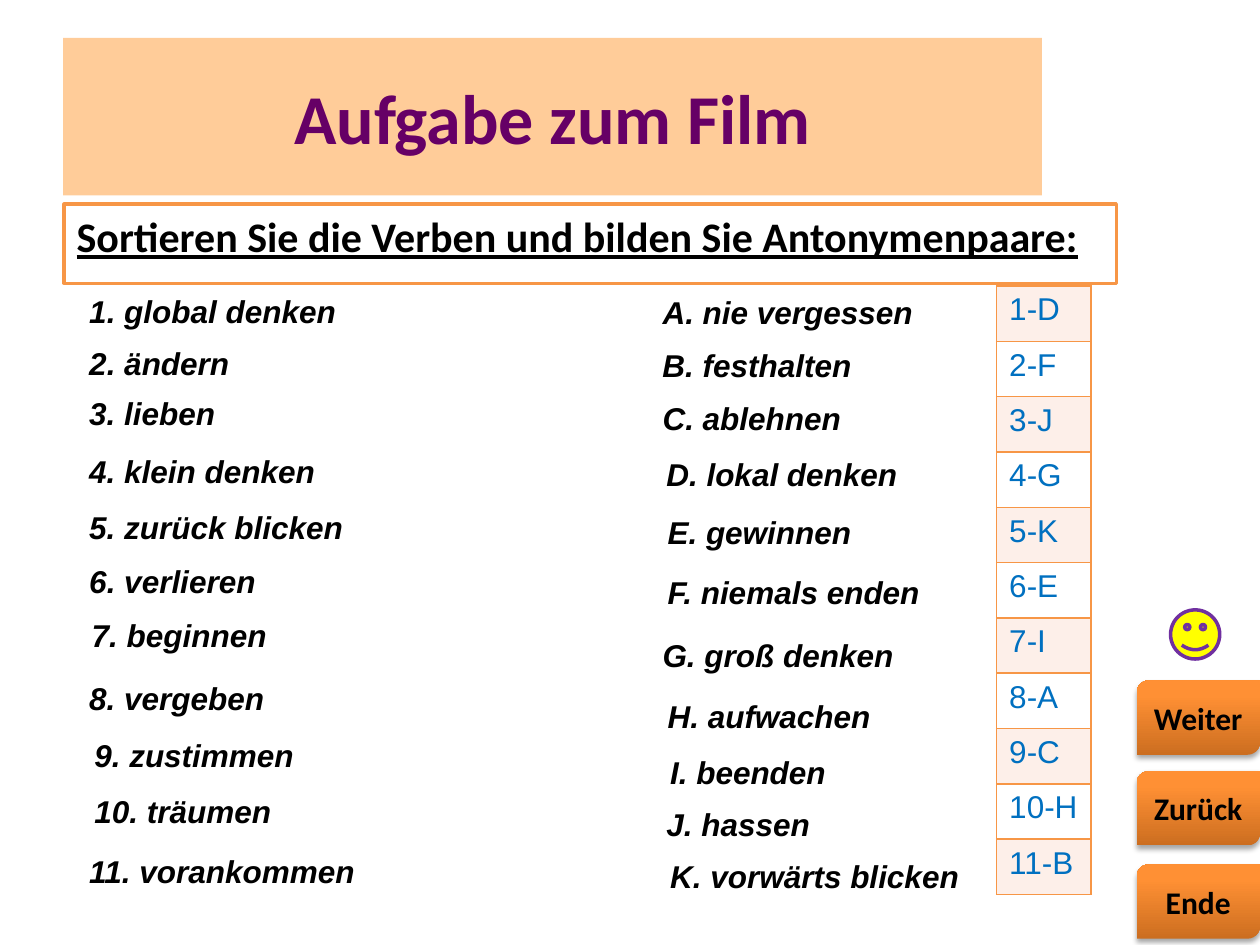
from lxml.etree import SubElement
from pptx import Presentation
from pptx.dml.color import RGBColor
from pptx.enum.shapes import MSO_SHAPE
from pptx.enum.text import MSO_ANCHOR, MSO_AUTO_SIZE, PP_ALIGN
from pptx.oxml import parse_xml
from pptx.oxml.ns import nsdecls, qn
from pptx.util import Inches, Pt

COLORS = {
    "black": "000000", "purple": "660066", "violet": "7030A0", "peach": "FFCC99",
    "orange": "F79646", "band": "FDEFE9", "white": "FFFFFF", "blue": "0070C0",
    "yellow": "FFFF00", "button_low": "CC6E20", "button_mid": "FF9034",
    "button_high": "FF9136",
}
TITLE = {"name": "Calibri", "size": Pt(40), "bold": True, "color": "purple"}
TASK = {"name": "Calibri", "size": Pt(24), "bold": True, "underline": True, "color": "black"}
VERB = {"name": "Arial", "size": Pt(18), "bold": True, "italic": True, "color": "black"}
ANSWER = {"name": "Arial", "size": Pt(18), "color": "blue"}
BUTTON = {"name": "Calibri", "size": Pt(18), "bold": True, "color": "black"}

# Verbs: text, offset from the column edge, top, width
VERBS = [
    ("1. global denken", 0, 2.27, 2.51),
    ("2. ändern", 0, 2.68, 1.32),
    ("3. lieben", 0, 3.08, 1.96),
    ("4. klein denken", 0, 3.54, 2.04),
    ("5. zurück blicken", 0, 3.98, 2.24),
    ("6. verlieren", 0, 4.41, 1.75),
    ("7. beginnen", 0.02, 4.84, 1.6),
    ("8. vergeben", 0, 5.34, 1.6),
    ("9. zustimmen", 0.04, 5.79, 2.01),
    ("10. träumen", 0.04, 6.24, 1.79),
    ("11. vorankommen", 0, 6.71, 2.33),
]
# Antonyms: the same, with line spacing where it is tighter
ANTONYMS = [
    ("A. nie vergessen", 0, 2.28, 2.21),
    ("B. festhalten", 0, 2.73, 1.73, 0.9),
    ("C. ablehnen", 0, 3.12, 2.15),
    ("D. lokal denken", 0.03, 3.56, 2.21),
    ("E. gewinnen", 0.04, 4.02, 2.24),
    ("F. niemals enden", 0.04, 4.5, 2.22),
    ("G. groß denken", 0, 5, 2.05),
    ("H. aufwachen", 0.04, 5.48, 1.89),
    ("I. beenden", 0.06, 5.93, 1.57),
    ("J. hassen", 0.03, 6.34, 1.65),
    ("K. vorwärts blicken", 0.06, 6.75, 2.52),
]
ANSWERS = ["1-D", "2-F", "3-J", "4-G", "5-K", "6-E", "7-I", "8-A", "9-C", "10-H", "11-B"]
BUTTONS = [("Weiter", 5.4), ("Zurück", 6.12), ("Ende", 6.86)]


def rgb(color):
    return RGBColor.from_string(COLORS[color])


def write(frame, text, style, align=PP_ALIGN.LEFT):
    """Put one styled paragraph into a text frame."""
    para = frame.paragraphs[0]
    para.alignment = align
    span = para.add_run()
    span.text = text
    for key, value in style.items():
        if key == "color":
            span.font.color.rgb = rgb(value)
        else:
            setattr(span.font, key, value)
    return para


def add_title(page, left, top, width, height):
    title = page.shapes.title
    title.left, title.top, title.width, title.height = map(Inches, (left, top, width, height))
    title.fill.solid()
    title.fill.fore_color.rgb = rgb("peach")
    title.text_frame.vertical_anchor = MSO_ANCHOR.MIDDLE
    write(title.text_frame, "Aufgabe zum Film", TITLE, PP_ALIGN.CENTER)


def add_task(page, left, top, width, height):
    box = page.shapes.add_textbox(*map(Inches, (left, top, width, height)))
    box.line.color.rgb = rgb("orange")
    box.line.width = Pt(2)
    box.text_frame.word_wrap = True
    para = write(box.text_frame, "Sortieren Sie die Verben und bilden Sie Antonymenpaare:", TASK)
    properties = para._p.get_or_add_pPr()
    properties.set("marL", str(Inches(0.38)))
    properties.set("indent", str(Inches(-0.38)))


def add_verb_column(page, left, entries):
    for text, offset, top, width, *spacing in entries:
        height = 0.37 if spacing else 0.4
        box = page.shapes.add_textbox(*map(Inches, (left + offset, top, width, height)))
        box.text_frame.word_wrap = True
        box.text_frame.auto_size = MSO_AUTO_SIZE.SHAPE_TO_FIT_TEXT
        para = write(box.text_frame, text, VERB)
        if spacing:
            para.line_spacing = spacing[0]


def add_cell_borders(cell):
    properties = cell._tc.get_or_add_tcPr()
    for index, side in enumerate(("lnL", "lnR", "lnT", "lnB")):
        border = parse_xml(f'<a:{side} {nsdecls("a")} w="{Pt(1)}"><a:solidFill>'
                           f'<a:srgbClr val="{COLORS["orange"]}"/></a:solidFill></a:{side}>')
        properties.insert(index, border)


def add_answers(page, left, top, width, height):
    frame = page.shapes.add_table(len(ANSWERS), 1, *map(Inches, (left, top, width, height)))
    table = frame.table
    table.first_row = False
    table.horz_banding = False
    for index, answer in enumerate(ANSWERS):
        table.rows[index].height = Inches(height / len(ANSWERS))
        cell = table.cell(index, 0)
        cell.fill.solid()
        cell.fill.fore_color.rgb = rgb("white" if index % 2 else "band")
        add_cell_borders(cell)
        write(cell.text_frame, answer, ANSWER)


def add_button(page, text, left, top, width, height):
    button = page.shapes.add_shape(MSO_SHAPE.ROUND_2_DIAG_RECTANGLE,
                                   *map(Inches, (left, top, width, height)))
    button.line.fill.background()
    stops = "".join(
        f'<a:gs pos="{position * 1000}"><a:srgbClr val="{COLORS[color]}"/></a:gs>'
        for position, color in ((0, "button_low"), (80, "button_mid"), (100, "button_high")))
    properties = button._element.spPr
    properties.find(qn("a:prstGeom")).addnext(parse_xml(
        f'<a:gradFill {nsdecls("a")} rotWithShape="1"><a:gsLst>{stops}</a:gsLst>'
        '<a:lin ang="16200000" scaled="0"/></a:gradFill>'))
    # Soft shadow below
    effects = SubElement(properties, qn("a:effectLst"))
    shadow = SubElement(effects, qn("a:outerShdw"), blurRad=str(Pt(3.1)), dist=str(Pt(1.8)),
                        dir="5400000", rotWithShape="0")
    tint = SubElement(shadow, qn("a:srgbClr"), val=COLORS["black"])
    SubElement(tint, qn("a:alpha"), val="35000")
    button.text_frame.vertical_anchor = MSO_ANCHOR.MIDDLE
    write(button.text_frame, text, BUTTON, PP_ALIGN.CENTER)


def add_smiley(page, left, top, size):
    smiley = page.shapes.add_shape(MSO_SHAPE.SMILEY_FACE, *map(Inches, (left, top, size, size)))
    smiley.shadow.inherit = False
    smiley.fill.solid()
    smiley.fill.fore_color.rgb = rgb("yellow")
    smiley.line.color.rgb = rgb("violet")
    smiley.line.width = Pt(2)


def main():
    deck = Presentation()
    deck.slide_width, deck.slide_height = Inches(10), Inches(7.5)
    page = deck.slides.add_slide(deck.slide_layouts[5])
    # Navigation
    for text, top in BUTTONS:
        add_button(page, text, 9.02, top, 0.98, 0.59)
    # Heading and task
    add_title(page, 0.5, 0.3, 7.77, 1.25)
    add_task(page, 0.51, 1.62, 8.35, 0.63)
    # Verbs to match, and the solution
    add_verb_column(page, 0.61, VERBS)
    add_verb_column(page, 5.16, ANTONYMS)
    add_smiley(page, 9.29, 4.84, 0.39)
    add_answers(page, 7.91, 2.27, 0.75, 4.83)
    deck.save("out.pptx")


if __name__ == "__main__":
    main()
